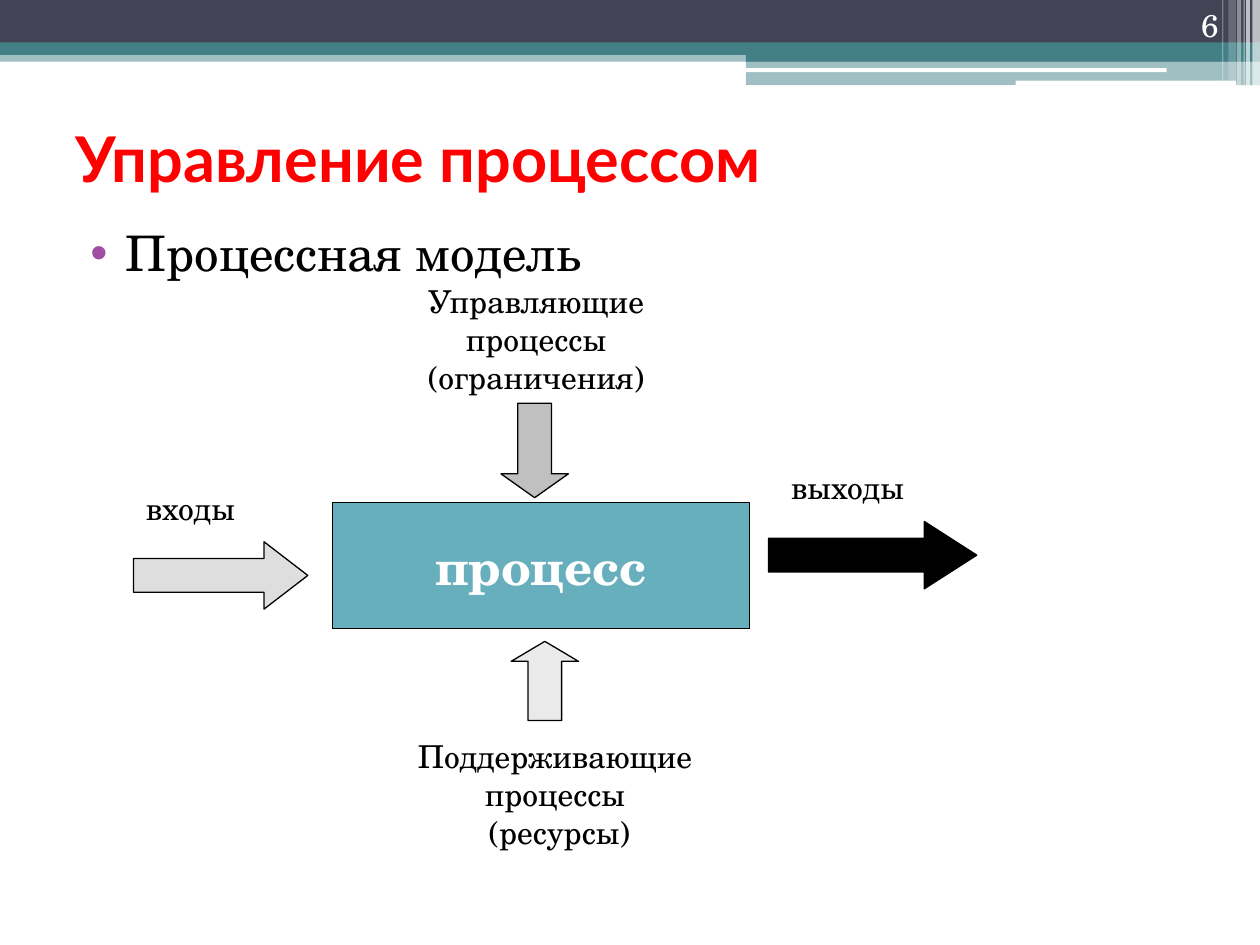
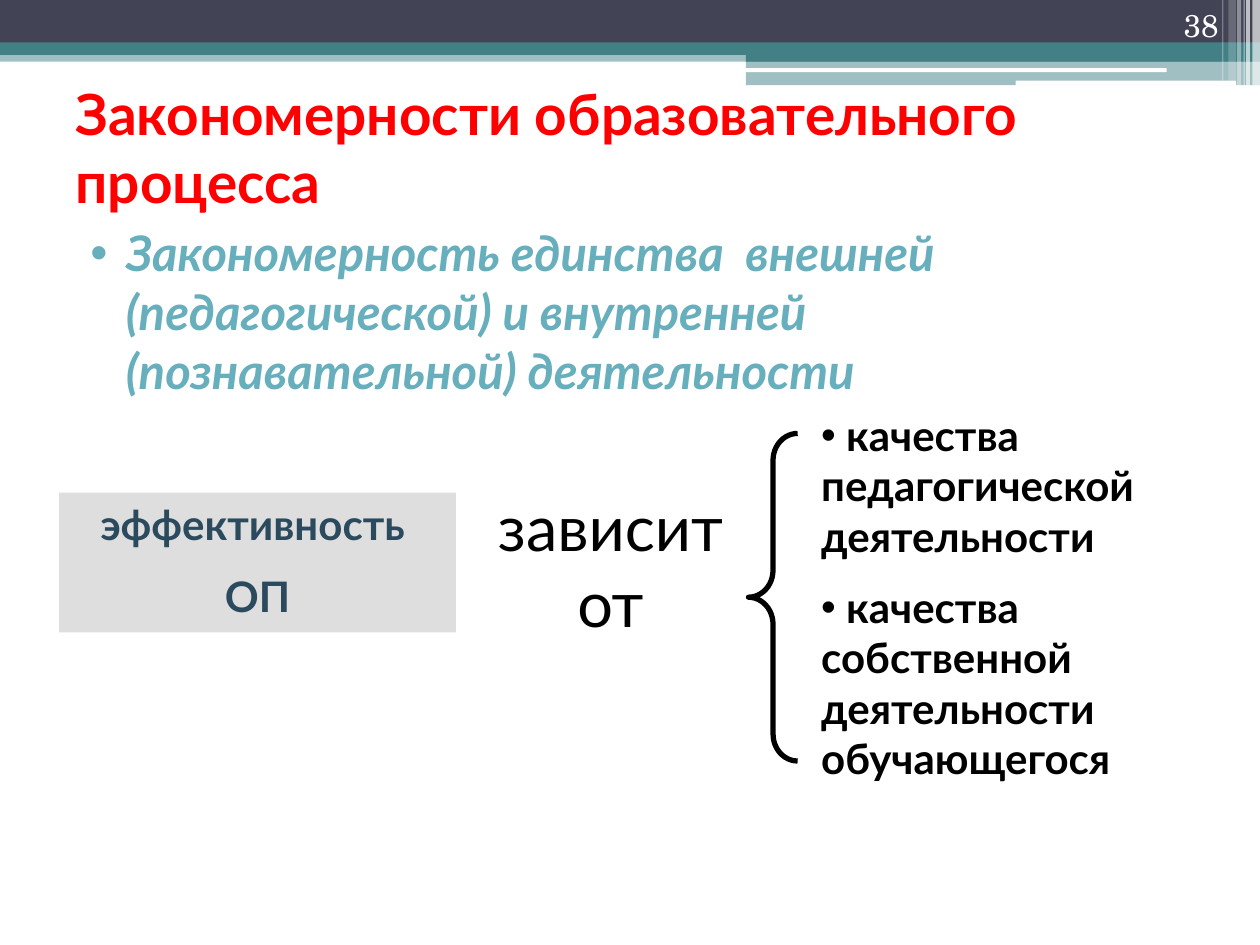
from lxml import etree
from pptx import Presentation
from pptx.dml.color import RGBColor
from pptx.enum import shapes, text
from pptx.oxml import ns
from pptx.util import Pt

WHITE = RGBColor(0xFF, 0xFF, 0xFF)
BLACK = RGBColor(0x00, 0x00, 0x00)
RED = RGBColor(0xFF, 0x00, 0x00)
NAVY = RGBColor(0x42, 0x44, 0x56)
GREEN = RGBColor(0x43, 0x80, 0x86)
TEAL = RGBColor(0x67, 0xAF, 0xBD)
PURPLE = RGBColor(0xA0, 0x4D, 0xA3)
SLATE = RGBColor(0x2B, 0x4A, 0x5E)
PALE_GREY = RGBColor(0xEA, 0xEA, 0xEA)
LIGHT_GREY = RGBColor(0xDE, 0xDE, 0xDE)
MID_GREY = RGBColor(0xC0, 0xC0, 0xC0)
SERIF, SANS = "TeX Gyre Schola", "Lato"
KIND = shapes.MSO_SHAPE
LEFT, CENTER, RIGHT = text.PP_ALIGN.LEFT, text.PP_ALIGN.CENTER, text.PP_ALIGN.RIGHT
TOP, MIDDLE, BOTTOM = text.MSO_ANCHOR.TOP, text.MSO_ANCHOR.MIDDLE, text.MSO_ANCHOR.BOTTOM


def add_shape(s, kind, box, fill=None, line=None, width=0.75, adjust=()):
    sp = s.shapes.add_shape(kind, *map(Pt, box))
    sp.shadow.inherit = False
    if fill is None:
        sp.fill.background()
    else:
        sp.fill.solid()
        sp.fill.fore_color.rgb = fill
    if line is None:
        sp.line.fill.background()
    else:
        sp.line.color.rgb = line
        sp.line.width = Pt(width)
    for i, value in enumerate(adjust):
        sp.adjustments[i] = value
    return sp


def write(sp, lines, size, font, color=BLACK, bold=False, italic=False, align=LEFT,
          anchor=TOP, gap=0, bullet=None, hanging=False):
    """Fill a shape with one paragraph per line; bullet is the bullet colour."""
    tf = sp.text_frame
    tf.word_wrap = True
    tf.auto_size = text.MSO_AUTO_SIZE.NONE
    tf.vertical_anchor = anchor
    for i, line in enumerate(lines):
        p = tf.add_paragraph() if i else tf.paragraphs[0]
        p.alignment = align
        p.space_before = Pt(gap if i else 0)
        r = p.add_run()
        r.text = line
        r.font.size, r.font.name = Pt(size), font
        r.font.bold, r.font.italic = bold, italic
        r.font.color.rgb = color
        if bullet is not None:
            pPr = p._p.get_or_add_pPr()
            if hanging:
                p.space_before = Pt(3)
                pPr.set("marL", str(Pt(28.8)))
                pPr.set("indent", str(Pt(-20.16)))
            clr = etree.SubElement(pPr, ns.qn("a:buClr"))
            etree.SubElement(clr, ns.qn("a:srgbClr"), val=str(bullet))
            etree.SubElement(pPr, ns.qn("a:buFont"), typeface="Arial")
            etree.SubElement(pPr, ns.qn("a:buChar"), char="•")


prs = Presentation()
prs.slide_width, prs.slide_height = Pt(720), Pt(540)
layout = prs.slide_layouts.get_by_name("Title Only")

# Number, title, title box, title size, topic, topic font, topic colour, bullet colour
HEADS = [
    ("6", "Управление процессом", (36, 56.2, 648, 67.7), 36,
     "Процессная модель", SERIF, BLACK, PURPLE),
    ("38", "Закономерности образовательного процесса", (36, 44.6, 648, 78.5), 32.4,
     "Закономерность единства  внешней (педагогической) и внутренней "
     "(познавательной) деятельности", SANS, TEAL, TEAL),
]
# Shape kind, box, colour, opacity in percent
BANDS = [
    (KIND.RECTANGLE, (0, 28.8, 720, 6.5), GREEN, 50),
    (KIND.RECTANGLE, (0, 0, 720, 24.5), NAVY, 100),
    (KIND.RECTANGLE, (0, 24.2, 720, 7.2), GREEN, 100),
    (KIND.RECTANGLE, (426.2, 28.1, 293.8, 7.2), GREEN, 100),
    (KIND.RECTANGLE, (426.2, 34.9, 293.8, 13.8), GREEN, 50),
    (KIND.ROUNDED_RECTANGLE, (425.5, 39, 241.2, 2.2), WHITE, 100),
    (KIND.ROUNDED_RECTANGLE, (580.3, 46.1, 126, 2.9), WHITE, 100),
]
# Left, width, height, opacity of the strips in the top right corner
STRIPS = [(715.7, 4.3, 49, 65), (712.1, 2.2, 49, 65), (710.6, 0.7, 49, 60),
          (707, 2.2, 49, 40), (702, 4.3, 46.1, 20), (698.4, 0.7, 46.1, 30)]
BANDS += [(KIND.RECTANGLE, (x, 0, w, h), WHITE, a) for x, w, h, a in STRIPS]

slides = []
for number, title, title_box, size, topic, font, color, bullet in HEADS:
    s = prs.slides.add_slide(layout)
    slides.append(s)
    for kind, box, fill, opacity in BANDS:
        sp = add_shape(s, kind, box, fill)
        if opacity < 100:
            clr = sp.fill._xPr.find(".//" + ns.qn("a:srgbClr"))
            etree.SubElement(clr, ns.qn("a:alpha"), val=str(opacity * 1000))
    sp = s.shapes.add_textbox(Pt(643.7), Pt(0), Pt(59.8), Pt(28.8))
    write(sp, [number], 18, SERIF, WHITE, align=RIGHT, anchor=BOTTOM)
    sp = s.shapes.title
    sp.left, sp.top, sp.width, sp.height = map(Pt, title_box)
    write(sp, [title], size, SANS, RED, bold=True, anchor=MIDDLE)
    s.shapes.element.append(sp.element)
    sp = s.shapes.add_textbox(Pt(36), Pt(123.8), Pt(648), Pt(393.8))
    emphasis = font == SANS
    write(sp, [topic], 28, font, color, emphasis, emphasis, bullet=bullet, hanging=True)

process_slide, pattern_slide = slides

# Process model: a box with an arrow on each side
sp = add_shape(process_slide, KIND.RECTANGLE, (190.1, 287.3, 238.3, 72), TEAL, BLACK)
write(sp, ["процесс"], 28, SERIF, WHITE, bold=True, align=CENTER, anchor=MIDDLE)
ARROWS = [
    (KIND.RIGHT_ARROW, (439.2, 298, 119, 38.5), BLACK, 0.779),
    (KIND.RIGHT_ARROW, (76.3, 309.6, 99.6, 38.5), LIGHT_GREY, 0.65),
    (KIND.DOWN_ARROW, (286.3, 230.4, 38.5, 54), MID_GREY, 0.354),
    (KIND.UP_ARROW, (292.1, 366.5, 38.5, 45.2), PALE_GREY, 0.297),
]
for kind, box, fill, head in ARROWS:
    add_shape(process_slide, kind, box, fill, BLACK, adjust=(0.5, head))
LABELS = [
    ((76.3, 275.8, 67, 28.8), ["входы"], LEFT),
    ((445, 264.2, 85, 28.8), ["выходы"], LEFT),
    ((230.4, 157.7, 151.9, 72.7), ["Управляющие процессы", "(ограничения)"], CENTER),
    ((190.1, 417.6, 254.2, 72), ["Поддерживающие процессы", " (ресурсы)"], CENTER),
]
for box, lines, align in LABELS:
    sp = process_slide.shapes.add_textbox(*map(Pt, box))
    write(sp, lines, 18, SERIF, align=align)

# Effectiveness and the two factors it depends on
sp = add_shape(pattern_slide, KIND.RECTANGLE, (33.8, 281.5, 226.8, 79.9), LIGHT_GREY)
write(sp, ["эффективность ", "ОП"], 24, SANS, SLATE, bold=True, align=CENTER, gap=12)
sp = pattern_slide.shapes.add_textbox(Pt(275), Pt(275.8), Pt(147.6), Pt(93.6))
write(sp, ["зависит от"], 36, SANS, align=CENTER)
sp = pattern_slide.shapes.add_textbox(Pt(462.2), Pt(230.4), Pt(244.1), Pt(223.2))
write(sp, [" качества педагогической деятельности",
           " качества собственной деятельности обучающегося"],
      24, SANS, bold=True, gap=12, bullet=BLACK)
add_shape(pattern_slide, KIND.LEFT_BRACE, (427.7, 247.7, 28.1, 187.2),
          line=BLACK, width=3, adjust=(0.549, 0.5))

prs.save("out.pptx")
